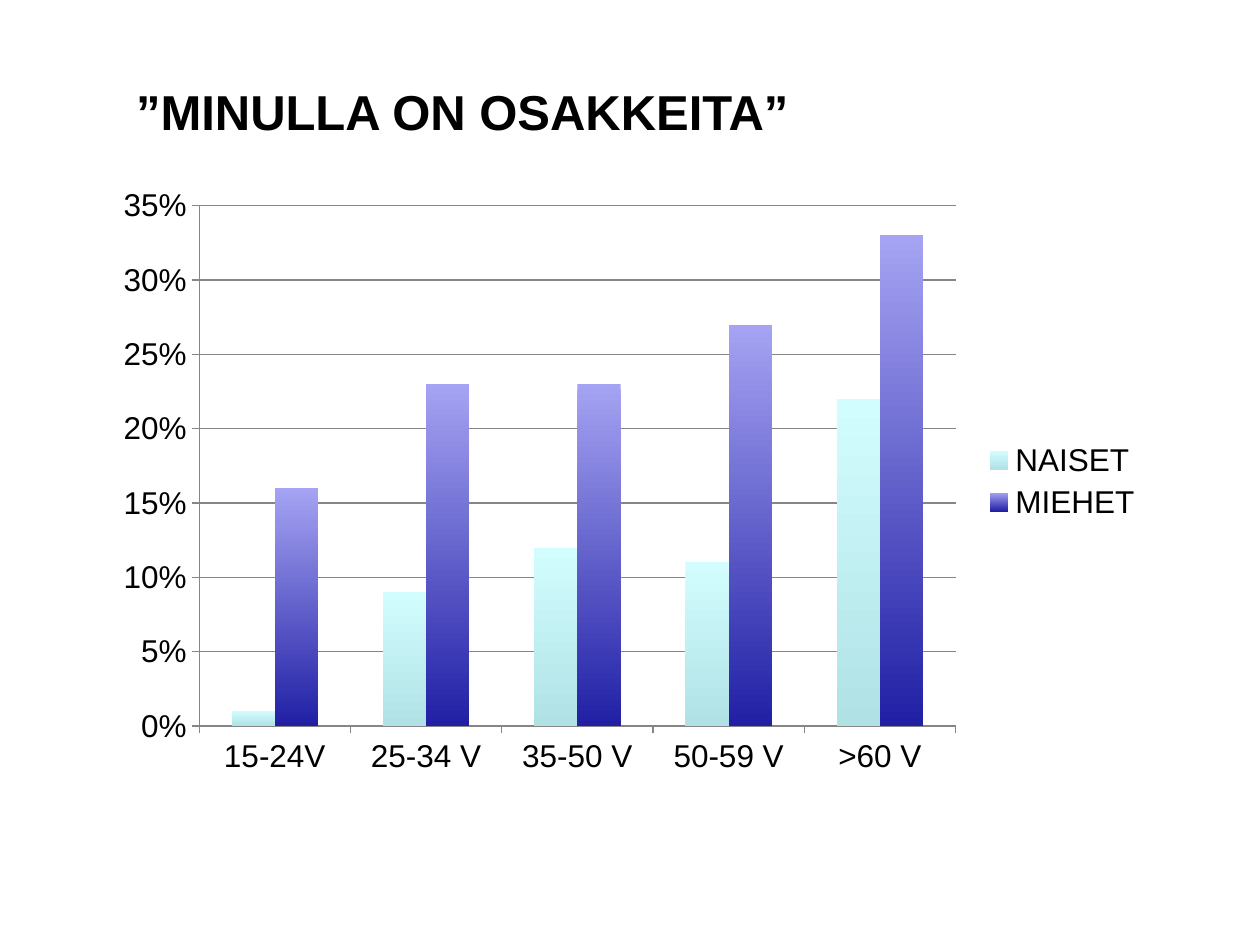
from lxml import etree
from pptx import Presentation
from pptx.chart.data import CategoryChartData
from pptx.dml.color import RGBColor
from pptx.enum.chart import XL_CHART_TYPE, XL_LEGEND_POSITION, XL_TICK_MARK
from pptx.enum.text import MSO_ANCHOR, PP_ALIGN
from pptx.oxml.ns import qn
from pptx.util import Cm, Pt

COLUMNS = XL_CHART_TYPE.COLUMN_CLUSTERED
RIGHT = XL_LEGEND_POSITION.RIGHT
OUTSIDE = XL_TICK_MARK.OUTSIDE
TOP = MSO_ANCHOR.TOP
LEFT = PP_ALIGN.LEFT

BLACK = RGBColor(0x00, 0x00, 0x00)
WHITE = RGBColor(0xFF, 0xFF, 0xFF)
GREY = RGBColor(0x86, 0x86, 0x86)
# Top and bottom colour of each series
WOMEN = (RGBColor(0xD2, 0xFD, 0xFF), RGBColor(0xB0, 0xE2, 0xE5))
MEN = (RGBColor(0xA5, 0xA3, 0xF2), RGBColor(0x21, 0x20, 0xA5))

AGES = ["15-24V", "25-34 V", "35-50 V", "50-59 V", ">60 V"]
SHARES = [
    ("NAISET", [0.01, 0.09, 0.12, 0.11, 0.22], WOMEN),
    ("MIEHET", [0.16, 0.23, 0.23, 0.27, 0.33], MEN),
]


def write(tf, text, size=18, color=BLACK, bold=False, font="Arial", align=LEFT):
    p = tf.paragraphs[0]
    p.alignment = align
    r = p.add_run()
    r.text = text
    r.font.name, r.font.size, r.font.bold = font, Pt(size), bold
    r.font.color.rgb = color


class Deck:
    font = "Arial"
    chart_size = 18

    def __init__(self, prs):
        self.s = prs.slides.add_slide(prs.slide_layouts[5])
        fill = self.s.background.fill
        fill.solid()
        fill.fore_color.rgb = WHITE

    def title(self, text, left, top, width, height):
        sp = self.s.shapes.title
        sp.left, sp.top, sp.width, sp.height = map(Cm, (left, top, width, height))
        tf = sp.text_frame
        tf.word_wrap = True
        tf.vertical_anchor = TOP
        tf.margin_top = Cm(0.25)
        write(tf, text, size=28, bold=True, font=self.font)

    def column_chart(self, cats, series, left, top, width, height, plot_area):
        data = CategoryChartData(number_format="0%")
        data.categories = cats
        for name, values, _ in series:
            data.add_series(name, values)
        chart = self.s.shapes.add_chart(
            COLUMNS, *map(Cm, (left, top, width, height)), data).chart
        chart.has_title = False
        chart.font.name, chart.font.size = self.font, Pt(self.chart_size)
        chart.font.color.rgb = BLACK
        chart.has_legend = True
        chart.legend.position = RIGHT
        chart.legend.include_in_layout = False

        # Columns with a top-to-bottom gradient
        plot = chart.plots[0]
        plot.gap_width, plot.overlap = 150, 0
        plot.vary_by_categories = False
        for ser, (_, _, colors) in zip(plot.series, series):
            fill = ser.format.fill
            fill.gradient()
            fill.gradient_angle = 270
            for stop, color in zip(fill.gradient_stops, colors):
                stop.color.rgb = color

        # Axes and gridlines
        value_axis = chart.value_axis
        value_axis.minimum_scale, value_axis.maximum_scale = 0, 0.35
        value_axis.major_unit = 0.05
        value_axis.tick_labels.number_format = "0%"
        value_axis.tick_labels.number_format_is_linked = False
        value_axis.has_major_gridlines = True
        for axis in (value_axis, chart.category_axis):
            axis.major_tick_mark = OUTSIDE
            self.line(axis.format.line)
        self.line(value_axis.major_gridlines.format.line)
        self.place_plot(chart, plot_area)

    def line(self, line):
        line.color.rgb = GREY
        line.width = Pt(0.75)

    def place_plot(self, chart, fractions):
        area = chart.plots[0]._element.getparent()
        for old in area.findall(qn("c:layout")):
            area.remove(old)
        layout = etree.Element(qn("c:layout"))
        manual = etree.SubElement(layout, qn("c:manualLayout"))
        settings = [("layoutTarget", "inner"), ("xMode", "edge"), ("yMode", "edge")]
        for tag, val in settings + list(zip("xywh", fractions)):
            etree.SubElement(manual, qn(f"c:{tag}"), val=str(val))
        area.insert(0, layout)


def main():
    prs = Presentation()
    prs.slide_width, prs.slide_height = Cm(25.4), Cm(19.05)
    deck = Deck(prs)
    deck.title("”MINULLA ON OSAKKEITA”", 2.49, 1.4, 18.42, 2.11)
    deck.column_chart(AGES, SHARES, 2.11, 3.53, 21.18, 12.34,
                      plot_area=(0.09, 0.05, 0.72, 0.85))
    prs.save("out.pptx")


if __name__ == "__main__":
    main()
